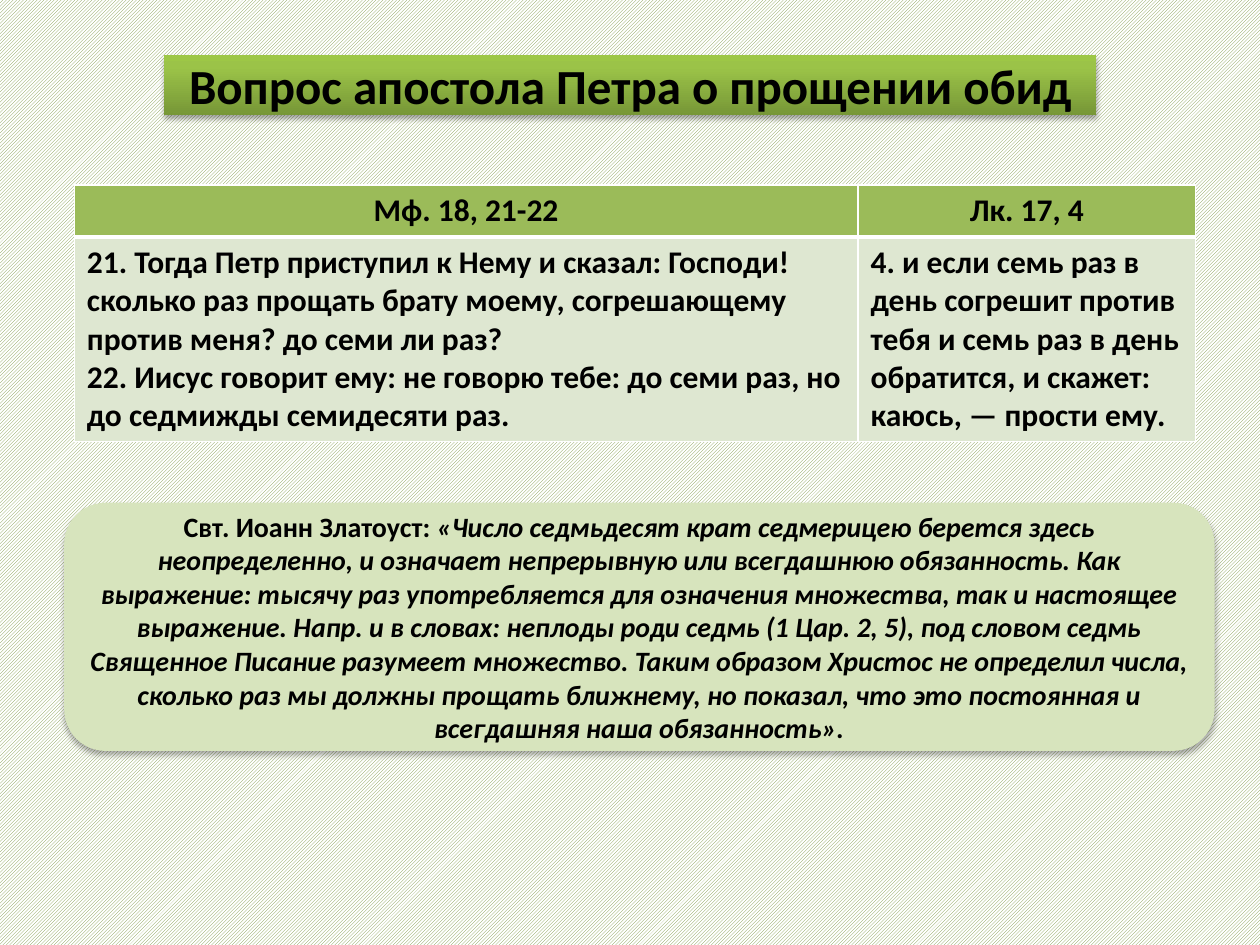
from lxml import etree
from pptx import Presentation, util as u
from pptx.dml.color import RGBColor
from pptx.enum import dml, shapes, text
from pptx.oxml.ns import qn

TITLE = "Вопрос апостола Петра о прощении обид"
VERSES = {
    "Мф. 18, 21-22": [
        "21. Тогда Петр приступил к Нему и сказал: Господи! сколько раз прощать "
        "брату моему, согрешающему против меня? до семи ли раз?",
        "22. Иисус говорит ему: не говорю тебе: до семи раз, но до седмижды "
        "семидесяти раз.",
    ],
    "Лк. 17, 4": [
        "4. и если семь раз в день согрешит против тебя и семь раз в день "
        "обратится, и скажет: каюсь, — прости ему.",
    ],
}
AUTHOR = "Свт. Иоанн Златоуст: "
QUOTE = (
    "«Число седмьдесят крат седмерицею берется здесь неопределенно, и означает "
    "непрерывную или всегдашнюю обязанность. Как выражение: тысячу раз "
    "употребляется для означения множества, так и настоящее выражение. Напр. и "
    "в словах: неплоды роди седмь (1 Цар. 2, 5), под словом седмь Священное "
    "Писание разумеет множество. Таким образом Христос не определил числа, "
    "сколько раз мы должны прощать ближнему, но показал, что это постоянная и "
    "всегдашняя наша обязанность»."
)
WIDTH, HEIGHT = 10, 7.5
TITLE_BOX = (1.3, 0.44, 7.4, 0.47)
TABLE_BOX = (0.59, 1.47, 8.9, 2.02)
QUOTE_BOX = (0.51, 3.99, 9.13, 1.97)
COLUMNS, ROWS = (6.22, 2.68), (0.41, 1.61)
ROW_FILLS = ("9BBB59", "DEE7D1")
TITLE_STOPS = ((0, "779737"), (80, "9BC348"), (100, "9DC746"))


def rgb(value):
    return RGBColor.from_string(value)


def inches(values):
    return [u.Inches(value) for value in values]


def write(paragraph, words, size=18, italic=False, align=text.PP_ALIGN.CENTER):
    paragraph.alignment = align
    run = paragraph.add_run()
    run.text = words
    font = run.font
    font.name, font.size, font.bold, font.italic = "Calibri", u.Pt(size), True, italic
    font.color.rgb = rgb("000000")


def add(parent, tag, **attributes):
    return etree.SubElement(parent, qn(tag), {k: str(v) for k, v in attributes.items()})


def shade(shape, alpha, blur, distance):
    shape.shadow.inherit = False
    effects = shape._element.spPr.find(qn("a:effectLst"))
    outer = add(effects, "a:outerShdw", blurRad=u.Pt(blur), dist=u.Pt(distance),
                dir=90 * 60000, rotWithShape=0)
    add(add(outer, "a:srgbClr", val="000000"), "a:alpha", val=alpha * 1000)


def border(cell, **widths):
    properties = cell._tc.get_or_add_tcPr()
    for index, side in enumerate("LRTB"):
        line = etree.Element(qn(f"a:ln{side}"), w=str(u.Pt(widths.get(side, 1))))
        add(add(line, "a:solidFill"), "a:srgbClr", val="FFFFFF")
        properties.insert(index, line)


def center_frame(shape):
    frame = shape.text_frame
    frame.word_wrap = True
    frame.auto_size = text.MSO_AUTO_SIZE.NONE
    frame.vertical_anchor = text.MSO_ANCHOR.MIDDLE
    return frame.paragraphs[0]


deck = Presentation()
deck.slide_width, deck.slide_height = inches((WIDTH, HEIGHT))
slide = deck.slides.add_slide(deck.slide_layouts[5])

# Hatched background
hatch = slide.background.fill
hatch.patterned()
hatch.pattern = dml.MSO_PATTERN.LIGHT_UPWARD_DIAGONAL
hatch.fore_color.rgb, hatch.back_color.rgb = rgb("77933C"), rgb("FFFFFF")

# Title on a rounded gradient bar
title = slide.shapes.title
title.left, title.top, title.width, title.height = inches(TITLE_BOX)
bar = title._element.spPr
add(add(bar, "a:prstGeom", prst="roundRect"), "a:avLst")
gradient = add(bar, "a:gradFill", rotWithShape=1)
stops = add(gradient, "a:gsLst")
for position, color in TITLE_STOPS:
    add(add(stops, "a:gs", pos=position * 1000), "a:srgbClr", val=color)
add(gradient, "a:lin", ang=270 * 60000, scaled=0)
title.line.fill.background()
shade(title, alpha=35, blur=3.1, distance=1.8)
write(center_frame(title), TITLE, size=28)

# Table of parallel verses
table = slide.shapes.add_table(len(ROWS), len(COLUMNS), *inches(TABLE_BOX)).table
for row, height in zip(table.rows, inches(ROWS)):
    row.height = height
for column, width in zip(table.columns, inches(COLUMNS)):
    column.width = width
for c, (reference, verses) in enumerate(VERSES.items()):
    header, body = table.cell(0, c), table.cell(1, c)
    for cell, color in zip((header, body), ROW_FILLS):
        cell.fill.solid()
        cell.fill.fore_color.rgb = rgb(color)
    border(header, B=3)
    border(body, T=3)
    write(header.text_frame.paragraphs[0], reference)
    for v, verse in enumerate(verses):
        frame = body.text_frame
        paragraph = frame.add_paragraph() if v else frame.paragraphs[0]
        write(paragraph, verse, align=text.PP_ALIGN.LEFT)

# Commentary
comment = slide.shapes.add_shape(shapes.MSO_SHAPE.ROUNDED_RECTANGLE, *inches(QUOTE_BOX))
comment.fill.solid()
comment.fill.fore_color.rgb = rgb("D7E4BD")
comment.line.fill.background()
shade(comment, alpha=32, blur=3.5, distance=2.2)
paragraph = center_frame(comment)
write(paragraph, AUTHOR, size=16)
write(paragraph, QUOTE, size=16, italic=True)

deck.save("out.pptx")
